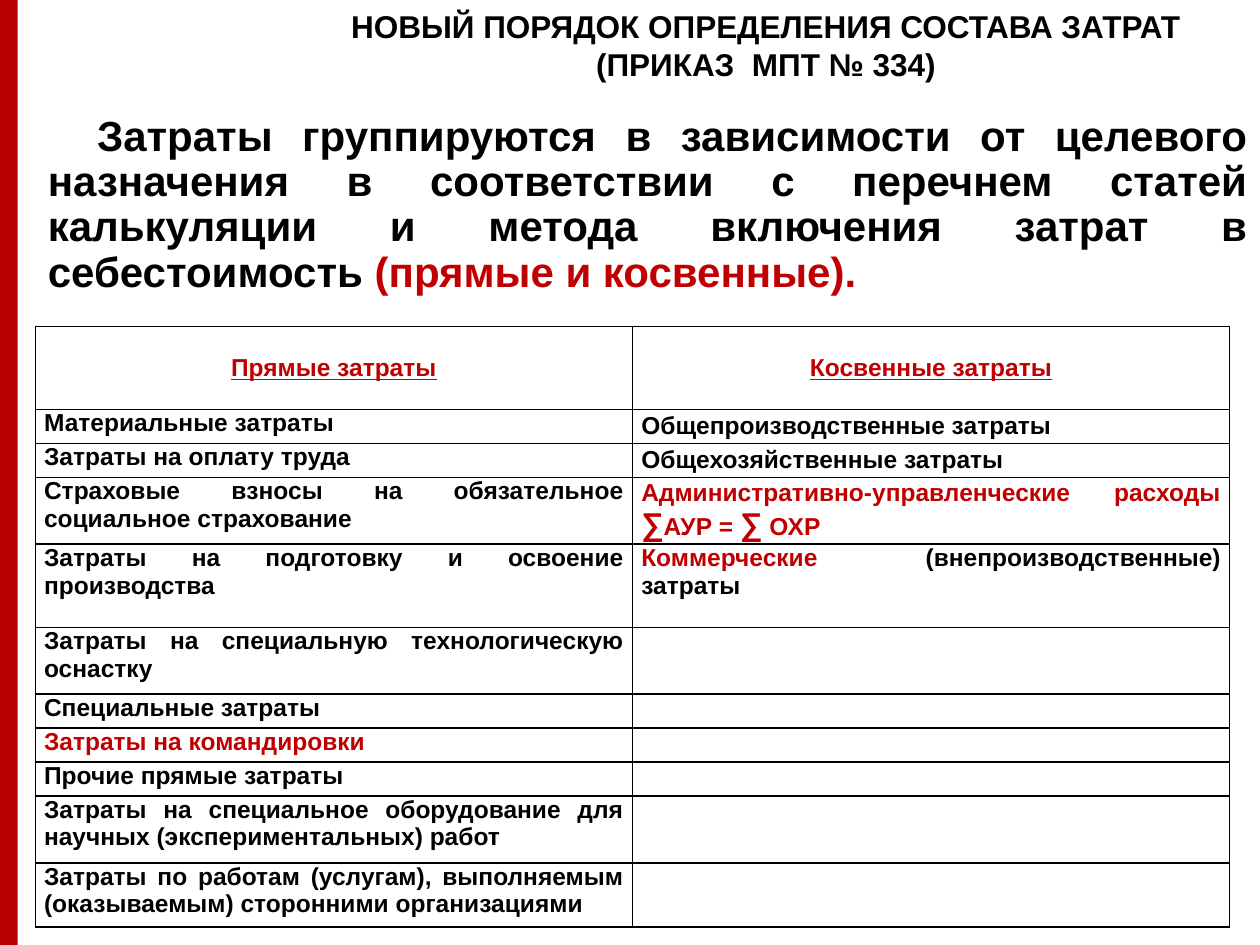
from lxml.etree import SubElement
from pptx import Presentation
from pptx.dml.color import RGBColor
from pptx.enum.shapes import MSO_SHAPE
from pptx.enum.text import MSO_ANCHOR, MSO_AUTO_SIZE, PP_ALIGN
from pptx.oxml.ns import qn
from pptx.util import Inches, Pt

COLORS = {"bar": "B80000", "accent": "C00000", "text": "000000",
          "border": "000000", "background": "FFFFFF"}
TABLE_SIZE = 14

HEADERS = ["Прямые затраты", "Косвенные затраты"]
DIRECT_COSTS = [
    "Материальные затраты",
    "Затраты на оплату труда",
    "Страховые взносы на обязательное социальное страхование",
    "Затраты на подготовку и освоение производства",
    "Затраты на специальную технологическую оснастку",
    "Специальные затраты",
    [("Затраты на командировки", {"color": "accent"})],
    "Прочие прямые затраты",
    "Затраты на специальное оборудование для научных (экспериментальных) работ",
    "Затраты по работам (услугам), выполняемым (оказываемым) сторонними организациями",
]
INDIRECT_COSTS = [
    "Общепроизводственные затраты",
    "Общехозяйственные затраты",
    [("Административно-управленческие расходы ", {"color": "accent"}),
     ("∑", {"color": "accent", "size": 18}),
     ("АУР = ", {"color": "accent"}),
     ("∑", {"color": "accent", "size": 18}),
     (" ОХР", {"color": "accent"})],
    [("Коммерческие", {"color": "accent"}),
     (" (внепроизводственные) затраты", {})],
]
ONE_LINE, TWO_LINES, THREE_LINES = 0.27, 0.53, 0.66
ROW_HEIGHTS = [THREE_LINES, ONE_LINE, ONE_LINE, TWO_LINES, THREE_LINES, TWO_LINES,
               ONE_LINE, ONE_LINE, ONE_LINE, TWO_LINES, 0.51]
SPACED_ROW = 4


def rgb(name):
    return RGBColor.from_string(COLORS[name])


def write(paragraph, text, size=TABLE_SIZE, color="text", underline=None):
    for index, line in enumerate(text.split("\n")):
        if index:
            paragraph.add_line_break()
        run = paragraph.add_run()
        run.text = line
        run.font.name = "Arial"
        run.font.size = Pt(size)
        run.font.bold = True
        run.font.underline = underline
        run.font.color.rgb = rgb(color)


def place(shape, box):
    shape.left, shape.top, shape.width, shape.height = map(Inches, box)


def add_side_bar(slide, box):
    bar = slide.shapes.add_shape(MSO_SHAPE.RECTANGLE, *map(Inches, box))
    bar.shadow.inherit = False
    bar.fill.solid()
    bar.fill.fore_color.rgb = rgb("bar")
    bar.line.fill.background()


def add_heading(slide, box):
    frame = slide.shapes.add_textbox(*map(Inches, box)).text_frame
    frame.word_wrap = True
    heading = frame.paragraphs[0]
    heading.alignment = PP_ALIGN.CENTER
    write(heading, "НОВЫЙ ПОРЯДОК ОПРЕДЕЛЕНИЯ СОСТАВА ЗАТРАТ\n(ПРИКАЗ  МПТ № 334)", size=18)


def fill_statement(slide, box):
    title = slide.shapes.title
    place(title, box)
    frame = title.text_frame
    frame.auto_size = MSO_AUTO_SIZE.NONE
    frame.word_wrap = True
    frame.vertical_anchor = MSO_ANCHOR.MIDDLE
    statement = frame.paragraphs[0]
    statement.alignment = PP_ALIGN.JUSTIFY
    statement.line_spacing = 0.9
    properties = statement._p.get_or_add_pPr()
    properties.set("marL", "0")
    properties.set("indent", str(Inches(0.39)))
    write(statement, "Затраты группируются в зависимости от целевого назначения в соответствии "
          "с перечнем статей калькуляции и метода включения затрат в себестоимость ", size=24)
    write(statement, "(прямые и косвенные).", size=24, color="accent")


def add_borders(cell):
    properties = cell._tc.get_or_add_tcPr()
    for index, side in enumerate(("lnL", "lnR", "lnT", "lnB")):
        line = SubElement(properties, qn(f"a:{side}"), w=str(Pt(1)))
        SubElement(SubElement(line, qn("a:solidFill")), qn("a:srgbClr"), val=COLORS["border"])
        properties.insert(index, line)


def fill_cell(cell, content, alignment, anchor):
    cell.margin_left = cell.margin_right = Inches(0.07)
    cell.margin_top = cell.margin_bottom = 0
    cell.vertical_anchor = anchor
    cell.fill.solid()
    cell.fill.fore_color.rgb = rgb("background")
    add_borders(cell)
    paragraph = cell.text_frame.paragraphs[0]
    paragraph.alignment = alignment
    parts = [(content, {})] if isinstance(content, str) else content
    for text, style in parts:
        write(paragraph, text, **style)
    if not parts:
        SubElement(paragraph._p, qn("a:endParaRPr"), sz=str(TABLE_SIZE * 100))


def add_cost_table(slide, box):
    blanks = [[]] * (len(DIRECT_COSTS) - len(INDIRECT_COSTS))
    costs = list(zip(DIRECT_COSTS, INDIRECT_COSTS + blanks))
    table = slide.shapes.add_table(len(ROW_HEIGHTS), 2, *map(Inches, box)).table
    table.first_row = table.horz_banding = False
    for column in table.columns:
        column.width = Inches(box[2] / 2)
    for row, height in zip(table.rows, ROW_HEIGHTS):
        row.height = Inches(height)
    for column, header in enumerate(HEADERS):
        style = {"color": "accent", "underline": True}
        fill_cell(table.cell(0, column), [(header, style)],
                  PP_ALIGN.CENTER, MSO_ANCHOR.MIDDLE)
    for row, (direct, indirect) in enumerate(costs, start=1):
        anchor = MSO_ANCHOR.TOP if row == SPACED_ROW else MSO_ANCHOR.MIDDLE
        fill_cell(table.cell(row, 0), direct, PP_ALIGN.JUSTIFY, MSO_ANCHOR.TOP)
        fill_cell(table.cell(row, 1), indirect, PP_ALIGN.JUSTIFY, anchor)


def main():
    presentation = Presentation()
    presentation.slide_width = Inches(10)
    presentation.slide_height = Inches(7.5)
    slide = presentation.slides.add_slide(presentation.slide_layouts[5])
    add_side_bar(slide, (-0.01, 0, 0.15, 7.5))
    fill_statement(slide, (0.28, 0.67, 9.72, 1.92))
    add_cost_table(slide, (0.28, 2.59, 9.48, sum(ROW_HEIGHTS)))
    add_heading(slide, (2.28, 0.01, 7.6, 0.71))
    presentation.save("out.pptx")


if __name__ == "__main__":
    main()
